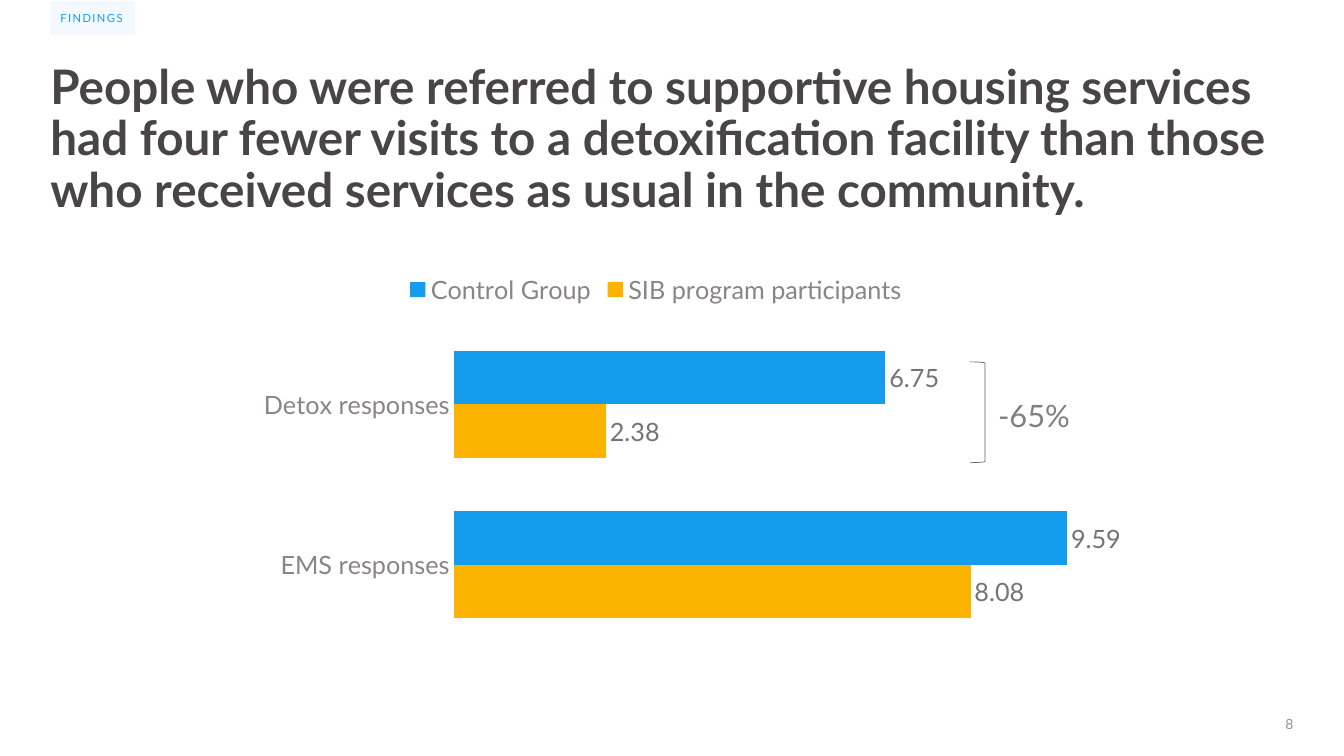
import dataclasses

import pptx
import pptx.chart.data
import pptx.dml.color
import pptx.enum.chart
import pptx.enum.shapes
import pptx.enum.text
import pptx.oxml
import pptx.oxml.ns
import pptx.util

Inches = pptx.util.Inches
Align = pptx.enum.text.PP_ALIGN
Anchor = pptx.enum.text.MSO_ANCHOR


@dataclasses.dataclass(frozen=True)
class Theme:
    font: str = "Lato"
    title: str = "494546"
    blue: str = "169CEC"
    yellow: str = "FCB300"
    axis: str = "8B8486"
    label: str = "787273"
    callout: str = "808080"
    bracket: str = "646464"
    footer: str = "959494"
    title_size: int = 34
    callout_size: int = 22
    chart_size: int = 18
    footer_size: int = 10
    tag_size: int = 8


THEME = Theme()


def color(value):
    return pptx.dml.color.RGBColor.from_string(value)


def style_font(font, size, hue, bold=False):
    font.name = THEME.font
    font.size = pptx.util.Pt(size)
    font.bold = bold
    font.color.rgb = color(hue)


def write_text(shape, text, *, size, hue, bold=False, align=Align.LEFT, anchor=Anchor.TOP,
               margins=(0.1, 0.05), wrap=True, line_spacing=None, tracking=None):
    """Fill a shape with one paragraph; margins are (horizontal, vertical) inches."""
    frame = shape.text_frame
    frame.word_wrap = wrap
    frame.vertical_anchor = anchor
    frame.margin_left = frame.margin_right = Inches(margins[0])
    frame.margin_top = frame.margin_bottom = Inches(margins[1])
    paragraph = frame.paragraphs[0]
    paragraph.alignment = align
    if line_spacing:
        paragraph.line_spacing = line_spacing
    run = paragraph.add_run()
    run.text = text
    style_font(run.font, size, hue, bold)
    if tracking:
        run.font._element.set("spc", str(tracking * 100))


def add_text(slide, box, text, **text_format):
    write_text(slide.shapes.add_textbox(*map(Inches, box)), text, **text_format)


def add_tag(slide, box, text):
    tag = slide.shapes.add_shape(pptx.enum.shapes.MSO_SHAPE.RECTANGLE, *map(Inches, box))
    tag.shadow.inherit = False
    tag.line.fill.background()
    tag.fill.solid()
    tag.fill.fore_color.rgb = color(THEME.blue)
    # Five percent opacity
    tint = tag._element.spPr.find(".//" + pptx.oxml.ns.qn("a:srgbClr"))
    tint.append(pptx.oxml.parse_xml(
        f'<a:alpha {pptx.oxml.ns.nsdecls("a")} val="5000"/>'))
    write_text(tag, text, size=THEME.tag_size, hue=THEME.blue, anchor=Anchor.MIDDLE,
               margins=(0.1, 0.1), wrap=False, tracking=1)


def set_plot_layout(chart, left, top, width, height):
    """Place the inner plot area by fractions of the chart."""
    plot_area = chart._chartSpace.chart.plotArea
    for layout in plot_area.findall(pptx.oxml.ns.qn("c:layout")):
        plot_area.remove(layout)
    values = {"x": left, "y": top, "w": width, "h": height}
    modes = "".join(f'<c:{name}Mode val="edge"/>' for name in "xy")
    sizes = "".join(f'<c:{name} val="{value}"/>' for name, value in values.items())
    plot_area.insert(0, pptx.oxml.parse_xml(
        f'<c:layout {pptx.oxml.ns.nsdecls("c")}><c:manualLayout>'
        f'<c:layoutTarget val="inner"/>{modes}{sizes}</c:manualLayout></c:layout>'))


def add_response_chart(slide, box):
    data = pptx.chart.data.CategoryChartData(number_format="0.00")
    data.categories = ["EMS responses", "Detox responses"]
    data.add_series("SIB program participants", (8.08, 2.38))
    data.add_series("Control Group", (9.59, 6.75))
    chart = slide.shapes.add_chart(
        pptx.enum.chart.XL_CHART_TYPE.BAR_CLUSTERED, *map(Inches, box), data).chart
    style_font(chart.font, THEME.chart_size, THEME.title)
    chart.has_title = False
    set_plot_layout(chart, 0.333, 0.156, 0.634, 0.806)

    # Legend
    chart.has_legend = True
    chart.legend.position = pptx.enum.chart.XL_LEGEND_POSITION.TOP
    chart.legend.include_in_layout = False
    style_font(chart.legend.font, THEME.chart_size, THEME.axis)

    # Axes
    categories, values = chart.category_axis, chart.value_axis
    categories.major_tick_mark = pptx.enum.chart.XL_TICK_MARK.NONE
    categories.format.line.fill.background()
    style_font(categories.tick_labels.font, THEME.chart_size, THEME.axis)
    values.minimum_scale, values.maximum_scale = 0, 12
    values.has_major_gridlines = False
    values.visible = False

    # Bars and value labels
    plot = chart.plots[0]
    plot.gap_width, plot.overlap = 100, 0
    plot.vary_by_categories = False
    for series, hue in zip(plot.series, (THEME.yellow, THEME.blue)):
        series.format.fill.solid()
        series.format.fill.fore_color.rgb = color(hue)
        labels = series.data_labels
        labels.show_value = True
        labels.position = pptx.enum.chart.XL_LABEL_POSITION.OUTSIDE_END
        style_font(labels.font, THEME.chart_size, THEME.label)


def add_difference(slide, box, text):
    """Draw a bracket at the left of the box and its value beside it."""
    left, top, width, height = box
    bracket = slide.shapes.add_shape(
        pptx.enum.shapes.MSO_SHAPE.RIGHT_BRACKET, *map(Inches, (left, top, 0.15, height)))
    bracket.shadow.inherit = False
    bracket.fill.background()
    bracket.line.color.rgb = color(THEME.bracket)
    bracket.line.width = pptx.util.Pt(0.5)
    add_text(slide, (left + 0.18, top + 0.3, width - 0.18, 0.47), text,
             size=THEME.callout_size, hue=THEME.callout)


def add_findings_slide(presentation):
    slide = presentation.slides.add_slide(presentation.slide_layouts[6])
    # Heading
    add_text(slide, (0.5, 0.58, 12.33, 1.27),
             "People who were referred to supportive housing services had four fewer visits "
             "to a detoxification facility than those who received services as usual in the "
             "community.",
             size=THEME.title_size, hue=THEME.title, bold=True, margins=(0, 0.05),
             line_spacing=0.9)
    # Page number
    add_text(slide, (9.83, 7.07, 3, 0.23), "8", size=THEME.footer_size, hue=THEME.footer,
             align=Align.RIGHT, anchor=Anchor.MIDDLE, margins=(0, 0))
    # Section tag, chart and callout
    add_tag(slide, (0.5, 0.01, 0.84, 0.34), "FINDINGS")
    add_response_chart(slide, (0.5, 2.6, 12.01, 3.95))
    add_difference(slide, (9.62, 3.59, 1.5, 1), "-65%")


def main():
    presentation = pptx.Presentation()
    presentation.slide_width = Inches(13.33)
    presentation.slide_height = Inches(7.5)
    add_findings_slide(presentation)
    presentation.save("out.pptx")


if __name__ == "__main__":
    main()
